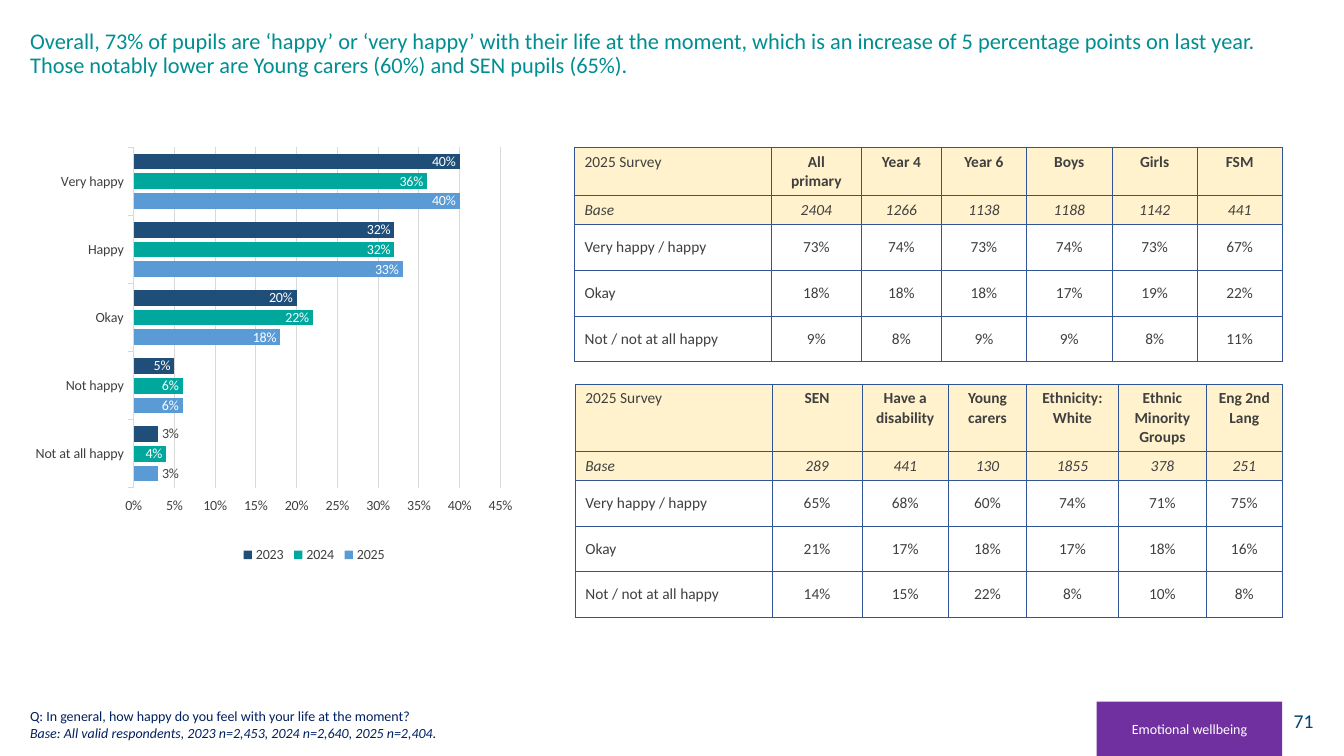
from lxml import etree
from pptx import Presentation
from pptx.chart.data import CategoryChartData
from pptx.dml.color import RGBColor
from pptx.enum.chart import XL_CHART_TYPE, XL_LABEL_POSITION as Spot
from pptx.enum.chart import XL_LEGEND_POSITION, XL_TICK_MARK
from pptx.enum.shapes import MSO_SHAPE
from pptx.enum.text import MSO_ANCHOR as Anchor, MSO_AUTO_SIZE, PP_ALIGN as Align
from pptx.oxml import parse_xml
from pptx.oxml.ns import qn
from pptx.util import Pt

HEX = {"title": "008E91", "page": "004376", "note": "002060", "tag": "7030A0",
       "white": "FFFFFF", "text": "404040", "cream": "FFF2CC", "edge": "2F5597",
       "grid": "D9D9D9", "2025": "5B9BD5", "2024": "00A79D", "2023": "1F4E79"}
RGB = {name: RGBColor.from_string(code) for name, code in HEX.items()}


def style(font, size, color, **extra):
    font.color.rgb = RGB[color]
    for key, value in {"name": "Calibri", "size": Pt(size), **extra}.items():
        setattr(font, key, value)


def place(part, index, **spots):
    """Give a chart part a manual layout."""
    for old in part.findall(qn("c:layout")):
        part.remove(old)
    layout = parse_xml('<c:layout xmlns:c="http://schemas.openxmlformats.org/'
                       'drawingml/2006/chart"><c:manualLayout/></c:layout>')
    for key, value in spots.items():
        etree.SubElement(layout[0], qn(f"c:{key}")).set("val", str(value))
    part.insert(index, layout)


deck = Presentation()
deck.slide_width, deck.slide_height = Pt(960), Pt(540)
slide = deck.slides.add_slide(deck.slide_layouts[5])
shapes = slide.shapes

# Title
title = shapes.title
title.left, title.top, title.width, title.height = Pt(14.4), Pt(18), Pt(911), Pt(70.5)
frame = title.text_frame
frame.text = ("Overall, 73% of pupils are ‘happy’ or ‘very happy’ with their life at the "
              "moment, which is an increase of 5 percentage points on last year. "
              "Those notably lower are Young carers (60%) and SEN pupils (65%).")
frame.auto_size = MSO_AUTO_SIZE.NONE
frame.vertical_anchor = Anchor.TOP
para = frame.paragraphs[0]
para.alignment, para.line_spacing = Align.LEFT, 0.9
style(para.runs[0].font, 16, "title")

# Chart data
data = CategoryChartData(number_format="0%")
data.categories = ["Not at all happy", "Not happy", "Okay", "Happy", "Very happy"]
data.add_series("2025", [0.03, 0.06, 0.18, 0.33, 0.4])
data.add_series("2024", [0.04, 0.06, 0.22, 0.32, 0.36])
data.add_series("2023", [0.03, 0.05, 0.2, 0.32, 0.4])
chart = shapes.add_chart(XL_CHART_TYPE.BAR_CLUSTERED, Pt(14.4), Pt(65.5),
                         Pt(420), Pt(352), data).chart
style(chart.font, 10, "text")
chart.has_title = False

# Bars and labels
plot = chart.plots[0]
plot.gap_width, plot.overlap, plot.vary_by_categories = 80, -25, False
for bars in plot.series:
    bars.format.fill.solid()
    bars.format.fill.fore_color.rgb = RGB[bars.name]
    labels = bars.data_labels
    labels.show_value, labels.position = True, Spot.INSIDE_END
    labels.number_format, labels.number_format_is_linked = "0%", False
    style(labels.font, 10, "white")
    if bars.values[0] < 0.04:
        label = bars.points[0].data_label
        style(label.font, 10, "text")
        label.position = Spot.OUTSIDE_END

# Axes and legend
cats, vals = chart.category_axis, chart.value_axis
for axis in (cats, vals):
    axis.major_tick_mark = XL_TICK_MARK.OUTSIDE
    style(axis.tick_labels.font, 10, "text")
vals.minimum_scale, vals.maximum_scale, vals.major_unit = 0, 0.45, 0.05
vals.tick_labels.number_format = "0%"
vals.tick_labels.number_format_is_linked = False
vals.format.line.fill.background()
cats.has_major_gridlines, vals.has_major_gridlines = False, True
for line in (cats.format.line, vals.major_gridlines.format.line):
    line.color.rgb, line.width = RGB["grid"], Pt(0.75)
chart.has_legend = True
legend = chart.legend
legend.position, legend.include_in_layout = XL_LEGEND_POSITION.BOTTOM, False
style(legend.font, 10, "text")
area = chart.element.find(".//" + qn("c:plotArea"))
place(area, 0, layoutTarget="inner", xMode="edge", yMode="edge",
      x=0.193, y=0.113, w=0.624, h=0.691)
place(chart.element.find(".//" + qn("c:legend")), 1, xMode="edge", yMode="edge",
      x=0.37, y=0.91, w=0.26, h=0.06)

# Survey tables: left, top, header height, column widths, columns of text
SIDE = ["2025 Survey", "Base", "Very happy / happy", "Okay", "Not / not at all happy"]
TABLES = [
    (410.4, 105.3, 33.6, [140.5, 64.5, 57, 61, 61, 61, 60.5], [
        ["All primary", "2404", "73%", "18%", "9%"],
        ["Year 4", "1266", "74%", "18%", "8%"],
        ["Year 6", "1138", "73%", "18%", "9%"],
        ["Boys", "1188", "74%", "17%", "9%"],
        ["Girls", "1142", "73%", "19%", "8%"],
        ["FSM", "441", "67%", "22%", "11%"]]),
    (410.9, 274.4, 46.5, [140.5, 64.5, 61.5, 56, 65.5, 63, 54], [
        ["SEN", "289", "65%", "21%", "14%"],
        ["Have a disability", "441", "68%", "17%", "15%"],
        ["Young carers", "130", "60%", "18%", "22%"],
        ["Ethnicity: White", "1855", "74%", "17%", "8%"],
        ["Ethnic Minority Groups", "378", "71%", "18%", "10%"],
        ["Eng 2nd Lang", "251", "75%", "16%", "8%"]])]
for left, top, head, widths, groups in TABLES:
    heights = [head, 20.6, 32.6, 32.6, 32.6]
    table = shapes.add_table(5, 7, Pt(left), Pt(top), Pt(sum(widths)),
                             Pt(sum(heights))).table
    table.first_row = table.horz_banding = False
    for row, height in zip(table.rows, heights):
        row.height = Pt(height)
    for c, (width, words) in enumerate(zip(widths, [SIDE] + groups)):
        table.columns[c].width = Pt(width)
        for r, word in enumerate(words):
            cell = table.cell(r, c)
            cell.text = word
            cell.vertical_anchor = Anchor.MIDDLE if r else Anchor.TOP
            para = cell.text_frame.paragraphs[0]
            para.alignment = Align.CENTER if c else Align.LEFT
            style(para.runs[0].font, 11, "text", bold=r == 0 and c > 0, italic=r == 1)
            # Borders come before the fill in the cell properties
            props = cell._tc.get_or_add_tcPr()
            for edge in ("lnL", "lnR", "lnT", "lnB"):
                line = etree.SubElement(props, qn(f"a:{edge}"), w=str(Pt(0.5)))
                fill = etree.SubElement(line, qn("a:solidFill"))
                etree.SubElement(fill, qn("a:srgbClr"), val=HEX["edge"])
            if r < 2:
                cell.fill.solid()
                cell.fill.fore_color.rgb = RGB["cream"]
            else:
                cell.fill.background()

# Footer: question, section tag, page number
NOTE = ["Q: In general, how happy do you feel with your life at the moment?",
        "Base: All valid respondents, 2023 n=2,453, 2024 n=2,640, 2025 n=2,404."]
FOOT = [
    (14.4, 501.1, 805.7, 31.7, None, NOTE, 10, "note", Align.LEFT, Anchor.BOTTOM),
    (783.4, 501.1, 132.5, 38.9, "tag", ["Emotional wellbeing"], 10, "white",
     Align.CENTER, Anchor.MIDDLE),
    (902.9, 500.4, 42.5, 28.8, None, ["71"], 14, "page", Align.RIGHT, Anchor.MIDDLE)]
for left, top, width, height, fill, lines, size, color, align, anchor in FOOT:
    spot = Pt(left), Pt(top), Pt(width), Pt(height)
    if fill:
        box = shapes.add_shape(MSO_SHAPE.RECTANGLE, *spot)
        box.shadow.inherit = False
        box.fill.solid()
        box.fill.fore_color.rgb = RGB[fill]
        box.line.fill.background()
    else:
        box = shapes.add_textbox(*spot)
    frame = box.text_frame
    frame.word_wrap, frame.vertical_anchor = True, anchor
    for i, text in enumerate(lines):
        para = frame.add_paragraph() if i else frame.paragraphs[0]
        para.text, para.alignment = text, align
        style(para.runs[0].font, size, color, italic=i == 1)

deck.save("out.pptx")
